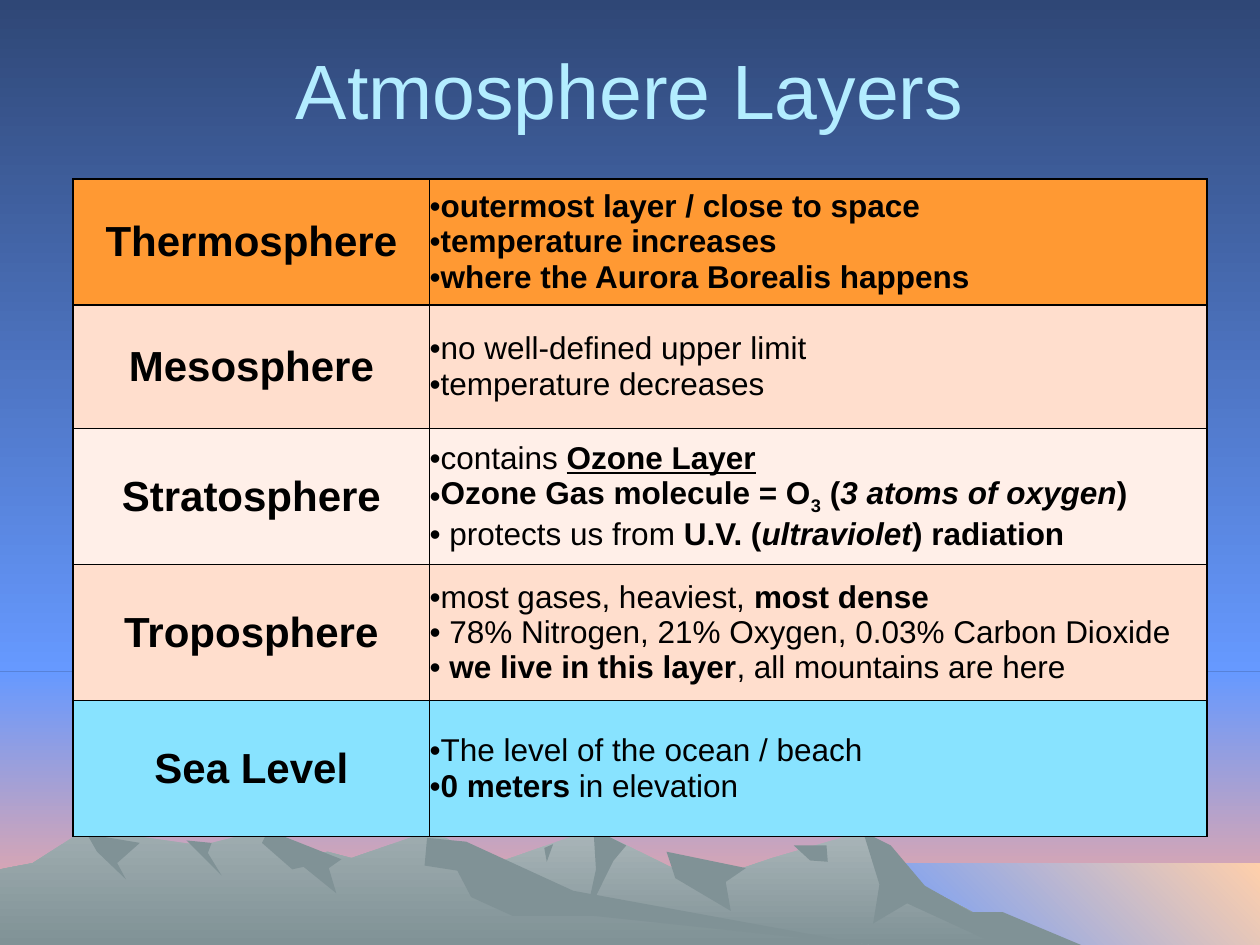
"""Build the Atmosphere Layers slide: a mountain scene behind a table of layers."""
from dataclasses import dataclass

from lxml.etree import SubElement
from pptx import Presentation
from pptx.dml.color import RGBColor
from pptx.enum.shapes import MSO_SHAPE
from pptx.enum.text import MSO_ANCHOR, PP_ALIGN
from pptx.oxml.ns import qn
from pptx.util import Emu, Pt

EMU_PER_PX = 9144
WIDTH, HEIGHT, HORIZON = 1000, 750, 533
FONT = "Arial"
BLACK = "000000"
ROCK = "809296"
DOWN, UP_RIGHT = 270, 45


@dataclass(frozen=True)
class Gradient:
    start: str
    end: str
    angle: int = DOWN


@dataclass(frozen=True)
class Area:
    left: int
    top: int
    right: int
    bottom: int
    paint: Gradient


@dataclass(frozen=True)
class Outline:
    points: list[tuple[int, int]]
    paint: Gradient | str = ROCK


@dataclass(frozen=True)
class Span:
    text: str
    style: str = ""


@dataclass(frozen=True)
class Layer:
    name: str
    colour: str
    height: int
    facts: list[list[Span]]


SKY = Gradient("2F4776", "6699FF")
AREAS = [
    Area(0, HORIZON, WIDTH, HEIGHT, Gradient("6699FF", "FFAA99")),
    Area(0, 0, WIDTH, HORIZON, SKY),
    Area(683, 685, WIDTH, HEIGHT, Gradient("6699FF", "FFCFAB", UP_RIGHT)),
]
MOUNTAINS = [
    Outline([(258, HEIGHT), (327, 709), (394, 685), (471, 658), (536, 690), (566, 697),
             (613, 681), (685, 660), (723, 698), (821, HEIGHT)], Gradient("AAB6B9", ROCK)),
    Outline([(685, 660), (707, 671), (734, 703), (771, 724), (796, 724), (858, HEIGHT),
             (792, HEIGHT), (720, 717), (693, 733), (698, 702)]),
    Outline([(471, 658), (497, 671), (487, 683), (465, 727), (473, 690)]),
    Outline([(529, 676), (592, 689), (576, 700), (580, 723), (536, 697)]),
    Outline([(630, 671), (656, 671), (657, 684), (643, 683)]),
    Outline([(432, 673), (439, 670), (434, 684)]),
    Outline([(0, HEIGHT), (0, 690), (26, 685), (68, 658), (160, 671), (212, 658), (236, 681),
             (260, 676), (279, 681), (331, 663), (354, 665), (432, 712), (690, HEIGHT)],
            Gradient("9FADB0", ROCK)),
    Outline([(208, 669), (213, 659), (271, 682), (261, 689), (267, 709), (241, 688), (232, 690)]),
    Outline([(339, 665), (370, 668), (455, 707), (690, HEIGHT), (472, 727), (407, 727),
             (374, 712), (363, 691), (337, 687)]),
    Outline([(148, 667), (168, 669), (165, 677), (176, 695)]),
    Outline([(69, 662), (111, 669), (93, 685), (100, 698), (77, 676)]),
]

STYLES = {
    "": {"bold": False},
    "b": {"bold": True},
    "bi": {"bold": True, "italic": True},
    "bu": {"bold": True, "underline": True},
    "sub": {"bold": True},
}
LAYERS = [
    Layer("Thermosphere", "FF9933", 100, [
        [Span("outermost layer / close to space", "b")],
        [Span("temperature increases", "b")],
        [Span("where the Aurora Borealis happens", "b")]]),
    Layer("Mesosphere", "FFDECD", 98, [
        [Span("no well-defined upper limit")],
        [Span("temperature decreases")]]),
    Layer("Stratosphere", "FFEFE8", 108, [
        [Span("contains "), Span("Ozone Layer", "bu")],
        [Span("Ozone Gas molecule = O", "b"), Span("3", "sub"), Span(" (", "b"),
         Span("3 atoms of oxygen", "bi"), Span(")", "b")],
        [Span(" protects us from "), Span("U.V. (", "b"), Span("ultraviolet", "bi"),
         Span(") radiation", "b")]]),
    Layer("Troposphere", "FFDECD", 108, [
        [Span("most gases, heaviest, "), Span("most dense", "b")],
        [Span(" 78% Nitrogen, 21% Oxygen, 0.03% Carbon Dioxide")],
        [Span(" we live in this layer", "b"), Span(", all mountains are here")]]),
    Layer("Sea Level", "88E3FF", 108, [
        [Span("The level of the ocean / beach")],
        [Span("0 meters", "b"), Span(" in elevation")]]),
]
COLUMN_WIDTHS = (283, 617)


def px(length: int) -> Emu:
    return Emu(length * EMU_PER_PX)


def rgb(colour: str) -> RGBColor:
    return RGBColor.from_string(colour)


def paint_fill(fill, paint: Gradient | str) -> None:
    if isinstance(paint, str):
        fill.solid()
        fill.fore_color.rgb = rgb(paint)
        return
    fill.gradient()
    fill.gradient_angle = paint.angle
    for stop, colour in zip(fill.gradient_stops, (paint.start, paint.end)):
        stop.color.rgb = rgb(colour)


def finish(shape, paint: Gradient | str) -> None:
    paint_fill(shape.fill, paint)
    shape.line.fill.background()
    shape.shadow.inherit = False


def draw_area(slide, area: Area) -> None:
    box = map(px, (area.left, area.top, area.right - area.left, area.bottom - area.top))
    finish(slide.shapes.add_shape(MSO_SHAPE.RECTANGLE, *box), area.paint)


def draw_outline(slide, outline: Outline) -> None:
    start, *others = outline.points
    builder = slide.shapes.build_freeform(*start, scale=EMU_PER_PX)
    builder.add_line_segments(others, close=True)
    finish(builder.convert_to_shape(), outline.paint)


def write(paragraph, span: Span, size: int, colour: str = BLACK) -> None:
    run = paragraph.add_run()
    run.text = span.text
    looks = {"name": FONT, "size": Pt(size), **STYLES[span.style]}
    for attribute, value in looks.items():
        setattr(run.font, attribute, value)
    run.font.color.rgb = rgb(colour)
    if span.style == "sub":
        run._r.get_or_add_rPr().set("baseline", "-25000")


def add_bullet(paragraph) -> None:
    properties = paragraph._p.get_or_add_pPr()
    for indent in ("marL", "indent"):
        properties.set(indent, "0")
    SubElement(SubElement(properties, qn("a:buClr")), qn("a:srgbClr"), val=BLACK)
    SubElement(properties, qn("a:buFont"), typeface=FONT)
    SubElement(properties, qn("a:buChar"), char="•")


def format_cell(cell, colour: str) -> None:
    for side in ("left", "right", "top", "bottom"):
        setattr(cell, f"margin_{side}", 0)
    cell.vertical_anchor = MSO_ANCHOR.MIDDLE
    for edge in ("a:lnL", "a:lnR", "a:lnT", "a:lnB"):
        border = SubElement(cell._tc.get_or_add_tcPr(), qn(edge), w=str(Pt(1)))
        SubElement(SubElement(border, qn("a:solidFill")), qn("a:srgbClr"), val=BLACK)
    paint_fill(cell.fill, colour)


def draw_title(slide, title: str) -> None:
    frame = slide.shapes.add_textbox(px(50), px(33), px(900), px(75)).text_frame
    frame.word_wrap = True
    frame.vertical_anchor = MSO_ANCHOR.MIDDLE
    frame.paragraphs[0].alignment = PP_ALIGN.CENTER
    write(frame.paragraphs[0], Span(title), 44, "B3EDFF")


def draw_layers(slide, layers: list[Layer]) -> None:
    total = sum(layer.height for layer in layers)
    table = slide.shapes.add_table(len(layers), len(COLUMN_WIDTHS), px(58), px(142),
                                   px(sum(COLUMN_WIDTHS)), px(total)).table
    table.first_row = table.horz_banding = False
    for column, width in zip(table.columns, COLUMN_WIDTHS):
        column.width = px(width)
    for row, layer in zip(table.rows, layers):
        row.height = px(layer.height)
        name_cell, facts_cell = row.cells
        for cell in (name_cell, facts_cell):
            format_cell(cell, layer.colour)
        heading = name_cell.text_frame.paragraphs[0]
        heading.alignment = PP_ALIGN.CENTER
        write(heading, Span(layer.name, "b"), 24)
        frame = facts_cell.text_frame
        for index, fact in enumerate(layer.facts):
            paragraph = frame.add_paragraph() if index else frame.paragraphs[0]
            add_bullet(paragraph)
            for span in fact:
                write(paragraph, span, 18)


def main() -> None:
    deck = Presentation()
    deck.slide_width, deck.slide_height = px(WIDTH), px(HEIGHT)
    slide = deck.slides.add_slide(deck.slide_layouts[6])
    paint_fill(slide.background.fill, SKY)
    for area in AREAS:
        draw_area(slide, area)
    for outline in MOUNTAINS:
        draw_outline(slide, outline)
    draw_title(slide, "Atmosphere Layers")
    draw_layers(slide, LAYERS)
    deck.save("out.pptx")


if __name__ == "__main__":
    main()
